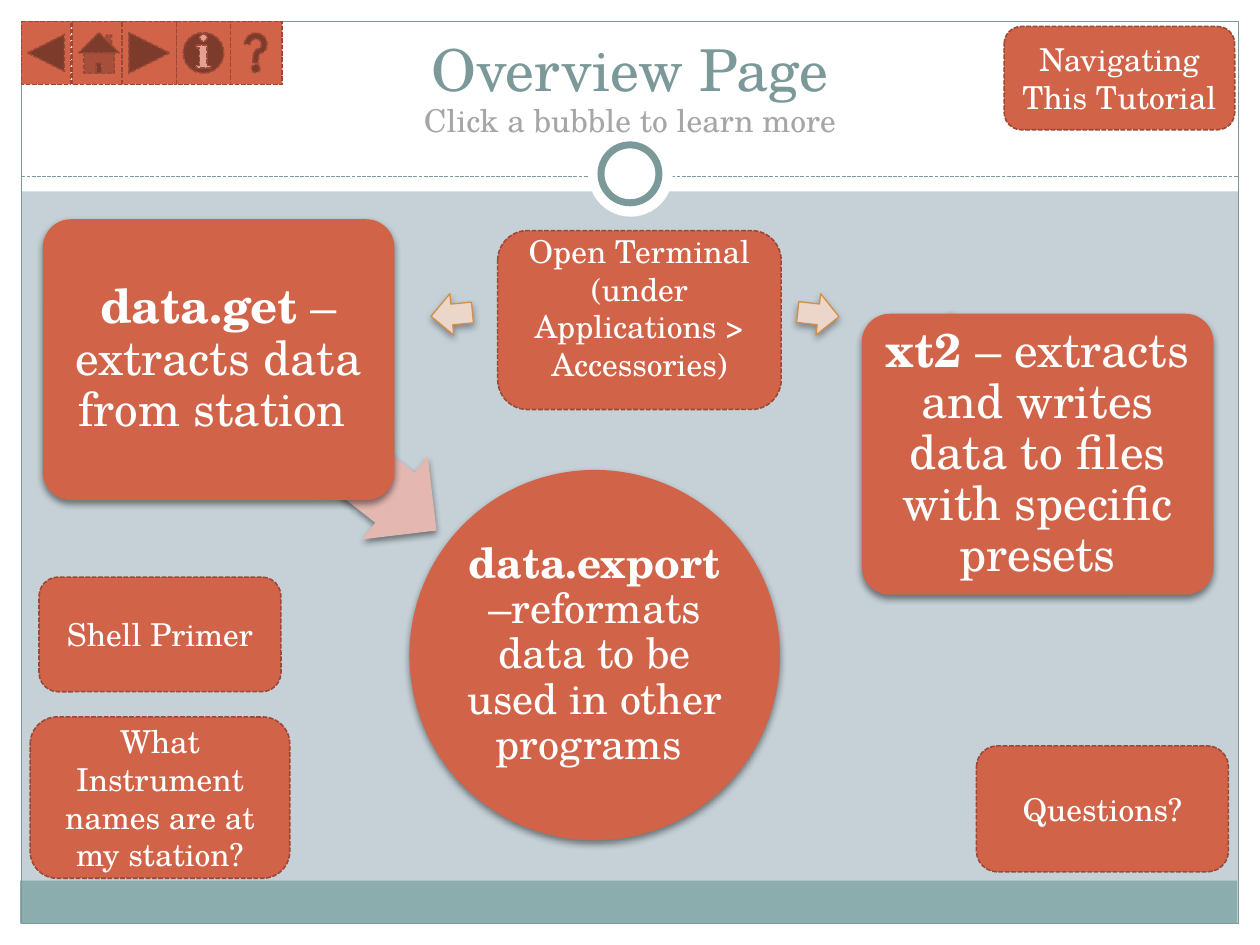
from pptx import Presentation
from pptx.dml.color import RGBColor
from pptx.enum.dml import MSO_LINE
from pptx.enum.shapes import MSO_CONNECTOR, MSO_SHAPE as SHAPE
from pptx.enum.text import MSO_ANCHOR as ANCHOR, PP_ALIGN
from pptx.oxml.ns import qn
from pptx.util import Inches, Pt
from lxml.etree import SubElement

FONT = "TeX Gyre Schola"
WHITE, TEAL, BAND, BACK = "FFFFFF", "7C999A", "8CADAE", "C5D1D7"
RUST, RUST_DARK, PINK = "D16349", "9B4936", "E5B7B1"
SAND, OCHRE, GREY = "ECD6C9", "D19049", "A6A6A6"


def rgb(value):
    return RGBColor.from_string(value)


def write(tf, *parts, size=18, color=WHITE, anchor=ANCHOR.MIDDLE,
          spacing=None, inset=None, bottom=None):
    """Fill a text frame with one centred paragraph of (text, bold) parts."""
    tf.word_wrap = True
    tf.vertical_anchor = anchor
    if inset is not None:
        tf.margin_left = tf.margin_right = Inches(inset)
        tf.margin_top = tf.margin_bottom = Inches(inset)
    if bottom is not None:
        tf.margin_bottom = Inches(bottom)
    p = tf.paragraphs[0]
    p.alignment = PP_ALIGN.CENTER
    if spacing:
        p.line_spacing = spacing
    for text, bold in parts:
        r = p.add_run()
        r.text = text
        r.font.name, r.font.size, r.font.bold = FONT, Pt(size), bold
        r.font.color.rgb = rgb(color)


class Page:
    def __init__(self, prs):
        self.s = prs.slides.add_slide(prs.slide_layouts[6])
        self.s.background.fill.solid()
        self.s.background.fill.fore_color.rgb = rgb(BACK)

    def shape(self, kind, box, fill=None, line=None, width=0.75, dash=None,
              shadow=None, rotation=0, adjust=()):
        sp = self.s.shapes.add_shape(kind, *map(Inches, box))
        sp.rotation = rotation
        for i, value in enumerate(adjust):
            sp.adjustments[i] = value
        if fill:
            sp.fill.solid()
            sp.fill.fore_color.rgb = rgb(fill)
        else:
            sp.fill.background()
        if line:
            sp.line.color.rgb = rgb(line)
            sp.line.width = Pt(width)
            if dash:
                sp.line.dash_style = dash
        else:
            sp.line.fill.background()
        sp.shadow.inherit = False
        if shadow:
            effects = sp._element.spPr.find(qn("a:effectLst"))
            outer = SubElement(effects, qn("a:outerShdw"), blurRad=str(Pt(4)),
                               dist=str(Pt(2)), dir="5400000", rotWithShape="0")
            black = SubElement(outer, qn("a:srgbClr"), val="000000")
            SubElement(black, qn("a:alpha"), val=str(shadow * 1000))
        return sp

    def text(self, box, *parts, **fmt):
        tb = self.s.shapes.add_textbox(*map(Inches, box))
        write(tb.text_frame, *parts, **fmt)

    def rule(self, x1, x2, y):
        c = self.s.shapes.add_connector(
            MSO_CONNECTOR.STRAIGHT, *map(Inches, (x1, y, x2, y)))
        c.line.color.rgb = rgb(TEAL)
        c.line.width = Pt(0.75)
        c.line.dash_style = MSO_LINE.SQUARE_DOT
        SubElement(c._element.spPr, qn("a:effectLst"))

    def button(self, kind, box, label=None, **fmt):
        sp = self.shape(kind, box, RUST, RUST_DARK, 0.9, MSO_LINE.SQUARE_DOT)
        if label:
            write(sp.text_frame, (label, False), **fmt)

    def bubble(self, kind, box, pad, name, detail, size, inset, adjust=()):
        self.shape(kind, box, RUST, shadow=45, adjust=adjust)
        x, y, w, h = box
        self.text((x + pad, y + pad, w - 2 * pad, h - 2 * pad),
                  (name, True), (detail, False),
                  size=size, spacing=0.9, inset=inset)

    def block_arrow(self, box, rotation):
        self.shape(SHAPE.LEFT_ARROW, box, PINK, shadow=45,
                   rotation=rotation, adjust=(0.6, 0.5))


def main():
    prs = Presentation()
    prs.slide_width, prs.slide_height = Inches(10), Inches(7.5)
    page = Page(prs)

    # White margins, footer band and frame
    for box in ((0, 7.33, 10, 0.17), (0, 0, 10, 1.52),
                (0, 0, 0.17, 7.5), (9.83, 0, 0.17, 7.5)):
        page.shape(SHAPE.RECTANGLE, box, WHITE)
    page.shape(SHAPE.RECTANGLE, (0.16, 6.99, 9.66, 0.34), BAND)
    page.shape(SHAPE.RECTANGLE, (0.17, 0.17, 9.66, 7.16), line=TEAL)

    # Header rule with ring
    page.rule(0.17, 9.83, 1.4)
    page.shape(SHAPE.OVAL, (4.67, 1.05, 0.67, 0.67), WHITE)
    page.shape(SHAPE.OVAL, (4.77, 1.15, 0.46, 0.46), WHITE, TEAL, 4)

    # Title
    page.text((0.17, 0.04, 9.66, 0.83), ("Overview Page", False),
              size=33, color=TEAL, anchor=ANCHOR.BOTTOM)

    # Program bubbles, each arrow behind its box
    page.bubble(SHAPE.OVAL, (3.25, 3.73, 2.94, 2.94), 0.43, "data.export",
                " –reformats data to be used in other programs ", 24, 0.02)
    page.block_arrow((1.5, 3.11, 2.2, 0.84), 218.2)
    page.bubble(SHAPE.ROUNDED_RECTANGLE, (0.34, 1.74, 2.79, 2.23), 0.06,
                "data.get", " – extracts data from station ", 27, 0.06, (0.1,))
    page.block_arrow((7.03, 3.03, 2.26, 0.84), 225.4)
    page.bubble(SHAPE.ROUNDED_RECTANGLE, (6.84, 2.49, 2.79, 2.23), 0.06,
                "xt2", " – extracts and writes data to files with specific presets",
                27, 0.06, (0.1,))

    # Subtitle
    page.text((0.17, 0.75, 9.66, 0.4), ("Click a bubble to learn more", False),
              color=GREY, anchor=ANCHOR.TOP)

    # Terminal hint with an arrow on each side
    page.button(SHAPE.ROUNDED_RECTANGLE, (3.95, 1.83, 2.25, 1.42),
                "Open Terminal (under Applications > Accessories)", bottom=0.25)
    for x, rotation in ((6.33, 6.3), (3.42, 174.6)):
        page.shape(SHAPE.RIGHT_ARROW, (x, 2.33, 0.33, 0.33), SAND, OCHRE,
                   shadow=35, rotation=rotation)

    # Navigation bar
    for kind, x, w in ((SHAPE.ACTION_BUTTON_BACK_OR_PREVIOUS, 0.17, 0.39),
                       (SHAPE.ACTION_BUTTON_HOME, 0.57, 0.43),
                       (SHAPE.ACTION_BUTTON_FORWARD_OR_NEXT, 0.97, 0.43),
                       (SHAPE.ACTION_BUTTON_HELP, 1.82, 0.42),
                       (SHAPE.ACTION_BUTTON_INFORMATION, 1.4, 0.43)):
        page.button(kind, (x, 0.17, w, 0.5))

    # Topic buttons
    for label, box in (
            ("Shell Primer", (0.31, 4.58, 1.92, 0.91)),
            ("What Instrument names are at my station?", (0.24, 5.69, 2.06, 1.28)),
            ("Navigating This Tutorial", (7.97, 0.21, 1.83, 0.82)),
            ("Questions?", (7.75, 5.92, 2, 1))):
        page.button(SHAPE.ROUNDED_RECTANGLE, box, label)

    prs.save("out.pptx")


if __name__ == "__main__":
    main()
